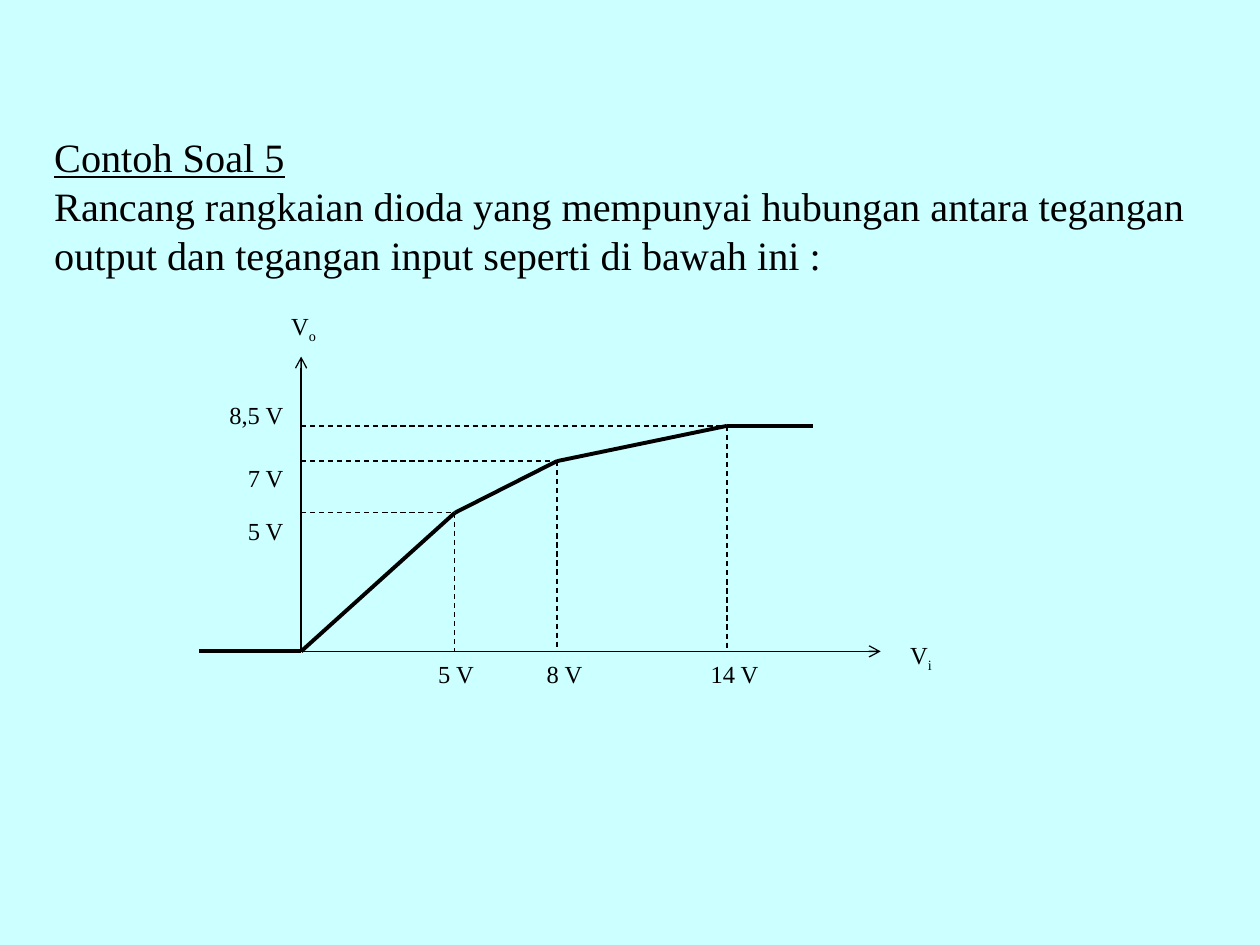
from itertools import pairwise
from typing import NamedTuple

from pptx import Presentation
from pptx.dml.color import RGBColor
from pptx.enum.dml import MSO_LINE
from pptx.enum.shapes import MSO_CONNECTOR
from pptx.enum.text import MSO_ANCHOR, MSO_AUTO_SIZE, PP_ALIGN
from pptx.oxml.ns import qn
from pptx.util import Inches, Pt

FONT = "Times New Roman"
BLACK = "000000"
BACKGROUND = "CCFFFF"


class Point(NamedTuple):
    x: float
    y: float


class Label(NamedTuple):
    text: str
    center: Point
    subscript: str = ""
    align: PP_ALIGN = PP_ALIGN.CENTER


ORIGIN = Point(2.39, 5.17)
CURVE_START = Point(1.58, ORIGIN.y)
BREAKPOINTS = [Point(3.61, 4.07), Point(4.42, 3.66), Point(5.77, 3.38)]
CURVE_END = Point(6.45, BREAKPOINTS[-1].y)
INPUT_AXIS_END = Point(6.99, ORIGIN.y)
OUTPUT_AXIS_END = Point(ORIGIN.x, 2.83)

LABEL_WIDTH, LABEL_HEIGHT = 0.7, 0.3
OUTPUT_LABEL_X = 1.9
INPUT_LABEL_Y = 5.35
LABELS = [
    Label("V", Point(2.41, 2.6), "o"),
    Label("V", Point(7.31, 5.21), "i"),
    *(Label(text, Point(OUTPUT_LABEL_X, y), align=PP_ALIGN.RIGHT)
      for text, y in [("8,5 V", 3.29), ("7 V", 3.79), ("5 V", 4.21)]),
    *(Label(text, Point(x, INPUT_LABEL_Y))
      for text, x in [("5 V", 3.62), ("8 V", 4.48), ("14 V", 5.83)]),
]


def color(hex_value: str) -> RGBColor:
    return RGBColor.from_string(hex_value)


def apply(target, values: dict) -> None:
    for name, value in values.items():
        setattr(target, name, value)


def add_run(paragraph, text: str, size: float, **font_values):
    run = paragraph.add_run()
    run.text = text
    apply(run.font, {"name": FONT, "size": Pt(size), **font_values})
    run.font.color.rgb = color(BLACK)
    return run


def fill_placeholder(shape, text: str, top: float, height: float, **font_values) -> None:
    apply(shape, {"left": Inches(0.33), "top": Inches(top),
                  "width": Inches(9.5), "height": Inches(height)})
    apply(shape.text_frame, {"word_wrap": True, "auto_size": MSO_AUTO_SIZE.NONE,
                             "vertical_anchor": MSO_ANCHOR.TOP})
    paragraph = shape.text_frame.paragraphs[0]
    apply(paragraph, {"alignment": PP_ALIGN.LEFT, "line_spacing": Pt(27.7),
                      "space_before": Pt(0), "space_after": Pt(0)})
    properties = paragraph._p.get_or_add_pPr()
    properties.set("marL", "0")
    properties.set("indent", "0")
    properties.append(properties.makeelement(qn("a:buNone"), {}))
    add_run(paragraph, text, 23, **font_values)


def add_line(slide, start: Point, end: Point, width: float = 0.75,
             dashed: bool = False, arrow: bool = False) -> None:
    connector = slide.shapes.add_connector(
        MSO_CONNECTOR.STRAIGHT, *(Inches(value) for value in (*start, *end)))
    connector.line.width = Pt(width)
    connector.line.color.rgb = color(BLACK)
    if dashed:
        connector.line.dash_style = MSO_LINE.DASH
    properties = connector._element.spPr
    if arrow:
        line = connector.line._get_or_add_ln()
        line.append(line.makeelement(qn("a:tailEnd"), {"type": "arrow"}))
    properties.append(properties.makeelement(qn("a:effectLst"), {}))


def add_label(slide, label: Label) -> None:
    text_box = slide.shapes.add_textbox(
        Inches(label.center.x - LABEL_WIDTH / 2), Inches(label.center.y - LABEL_HEIGHT / 2),
        Inches(LABEL_WIDTH), Inches(LABEL_HEIGHT))
    apply(text_box.text_frame, {
        "word_wrap": True, "vertical_anchor": MSO_ANCHOR.MIDDLE,
        "margin_left": 0, "margin_right": 0, "margin_top": 0, "margin_bottom": 0})
    paragraph = text_box.text_frame.paragraphs[0]
    paragraph.alignment = label.align
    add_run(paragraph, label.text, 14)
    if label.subscript:
        run = add_run(paragraph, label.subscript, 14)
        run.font._element.set("baseline", "-25000")


def draw_transfer_graph(slide) -> None:
    for axis_end in (INPUT_AXIS_END, OUTPUT_AXIS_END):
        add_line(slide, ORIGIN, axis_end, arrow=True)
    for point in BREAKPOINTS:
        add_line(slide, Point(ORIGIN.x, point.y), point, dashed=True)
        add_line(slide, point, Point(point.x, ORIGIN.y), dashed=True)
    for start, end in pairwise([CURVE_START, ORIGIN, *BREAKPOINTS, CURVE_END]):
        add_line(slide, start, end, width=2.25)
    for label in LABELS:
        add_label(slide, label)


def main() -> None:
    presentation = Presentation()
    apply(presentation, {"slide_width": Inches(10), "slide_height": Inches(7.5)})
    slide = presentation.slides.add_slide(presentation.slide_layouts[1])
    slide.background.fill.solid()
    slide.background.fill.fore_color.rgb = color(BACKGROUND)
    title, body = slide.placeholders
    fill_placeholder(title, "Contoh Soal 5", 1, 0.48, underline=True)
    fill_placeholder(
        body, "Rancang rangkaian dioda yang mempunyai hubungan antara tegangan "
        "output dan tegangan input seperti di bawah ini :", 1.39, 0.95)
    draw_transfer_graph(slide)
    presentation.save("out.pptx")


if __name__ == "__main__":
    main()
